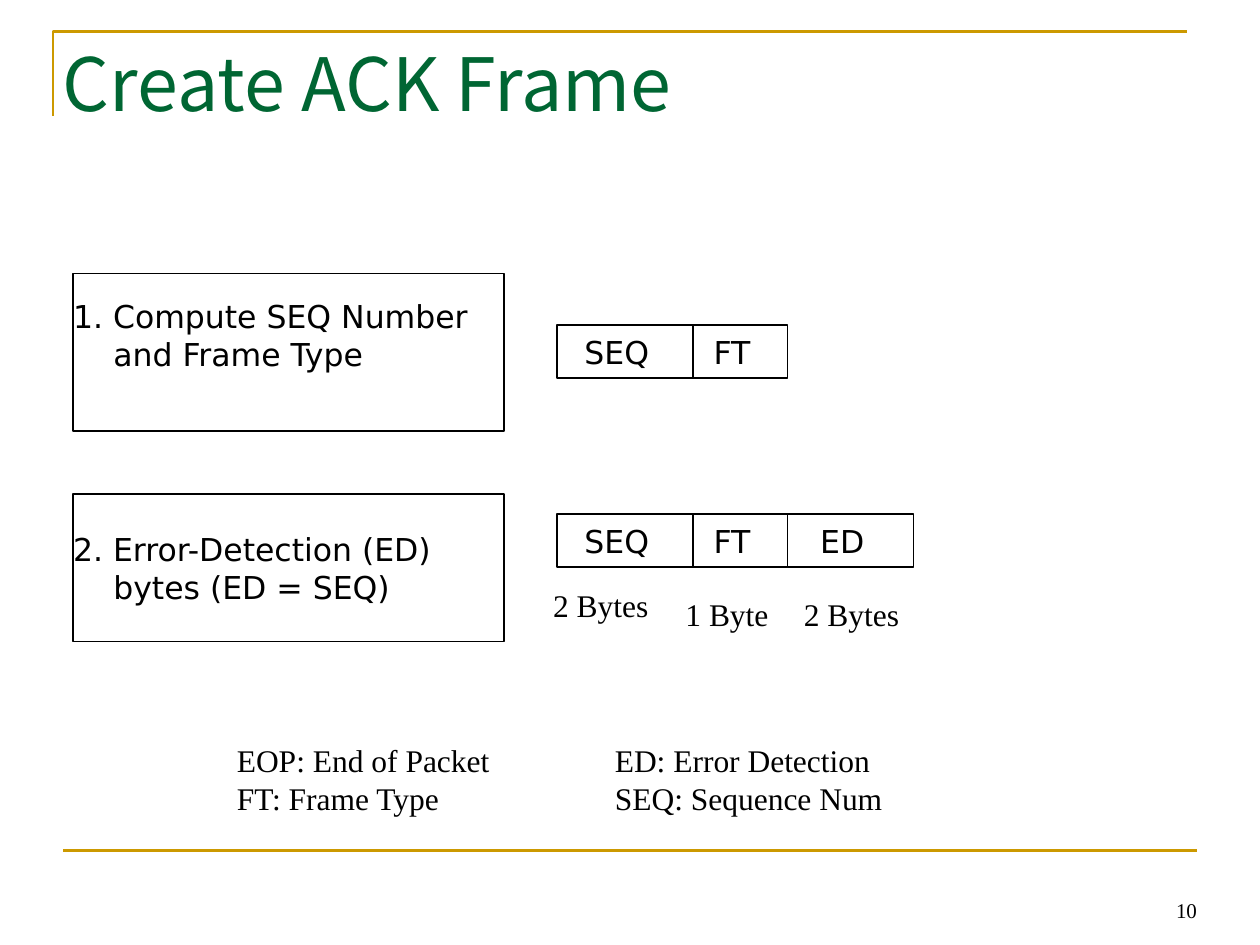
from dataclasses import dataclass

from lxml.etree import SubElement
from pptx import Presentation
from pptx.dml.color import RGBColor
from pptx.enum.shapes import MSO_CONNECTOR, MSO_SHAPE
from pptx.enum.text import MSO_ANCHOR, PP_ALIGN
from pptx.oxml.ns import qn
from pptx.util import Inches, Pt


@dataclass(frozen=True)
class Theme:
    ink: RGBColor = RGBColor(0x00, 0x00, 0x00)
    heading: RGBColor = RGBColor(0x00, 0x66, 0x33)
    rule: RGBColor = RGBColor(0xCC, 0x99, 0x00)
    heading_font: str = "Noto Sans CJK KR"
    box_font: str = "DejaVu Sans"
    note_font: str = "Times New Roman"
    heading_size: float = 42
    body_size: float = 18
    number_size: float = 12
    rule_width: float = 1.5
    box_width: float = 0.75


@dataclass(frozen=True)
class Step:
    text: str
    top: float
    height: float
    bottom_inset: float = 0


@dataclass(frozen=True)
class Field:
    name: str
    width: float


@dataclass(frozen=True)
class Note:
    text: str
    left: float
    top: float
    width: float


THEME = Theme()
STEPS = (
    Step("1. Compute SEQ Number and Frame Type", 2.17, 1.25, bottom_inset=0.28),
    Step("2. Error-Detection (ED) bytes (ED = SEQ)", 3.92, 1.17),
)
SEQ, FT, ED = Field("SEQ", 1.08), Field("FT", 0.75), Field("ED", 1)
FRAMES = ((2.58, (SEQ, FT)), (4.08, (SEQ, FT, ED)))
BYTE_COUNTS = (
    Note("2 Bytes", 4.34, 4.6, 0.87),
    Note("1 Byte", 5.39, 4.67, 0.77),
    Note("2 Bytes", 6.33, 4.67, 0.87),
)
LEGEND = "EOP: End of Packet\tED: Error Detection\nFT: Frame Type\tSEQ: Sequence Num"


def write(shape, text: str, *, font: str, size: float = THEME.body_size,
          color: RGBColor = THEME.ink, align=PP_ALIGN.LEFT, anchor=MSO_ANCHOR.TOP,
          insets=(0, 0, 0, 0), wrap: bool = True, hanging: float = 0,
          tab: float = 0) -> None:
    frame = shape.text_frame
    frame.text = text
    frame.word_wrap = wrap
    frame.vertical_anchor = anchor
    (frame.margin_left, frame.margin_top,
     frame.margin_right, frame.margin_bottom) = map(Inches, insets)
    for paragraph in frame.paragraphs:
        paragraph.alignment = align
        properties = paragraph._p.get_or_add_pPr()
        if hanging:
            properties.set("marL", str(Inches(hanging)))
            properties.set("indent", str(-Inches(hanging)))
        if tab:
            stops = SubElement(properties, qn("a:tabLst"))
            SubElement(stops, qn("a:tab"), pos=str(Inches(tab)), algn="l")
        for run in paragraph.runs:
            run.font.name = font
            run.font.size = Pt(size)
            run.font.color.rgb = color


def add_text(slide, text: str, left: float, top: float, width: float,
             height: float, **text_format) -> None:
    area = slide.shapes.add_textbox(*map(Inches, (left, top, width, height)))
    write(area, text, **text_format)


def add_box(slide, text: str, left: float, top: float, width: float,
            height: float, **text_format) -> None:
    box = slide.shapes.add_shape(
        MSO_SHAPE.RECTANGLE, *map(Inches, (left, top, width, height)))
    box.shadow.inherit = False
    box.fill.background()
    box.line.color.rgb = THEME.ink
    box.line.width = Pt(THEME.box_width)
    write(box, text, font=THEME.box_font, anchor=MSO_ANCHOR.MIDDLE, **text_format)


def add_frame(slide, top: float, fields: tuple[Field, ...]) -> None:
    left = 4.42
    for field in fields:
        add_box(slide, field.name, left, top, field.width, 0.42,
                align=PP_ALIGN.CENTER, insets=(0, 0, 0.13, 0), wrap=False)
        left += field.width


def add_rules(slide) -> None:
    builder = slide.shapes.build_freeform(Inches(0.42), Inches(0.92))
    builder.add_line_segments(
        [(Inches(0.42), Inches(0.25)), (Inches(9.42), Inches(0.25))], close=False)
    corner = builder.convert_to_shape()
    corner.shadow.inherit = False
    corner.fill.background()
    footer = slide.shapes.add_connector(
        MSO_CONNECTOR.STRAIGHT, *map(Inches, (0.5, 6.75, 9.5, 6.75)))
    SubElement(footer._element.spPr, qn("a:effectLst"))
    for rule in (corner, footer):
        rule.line.color.rgb = THEME.rule
        rule.line.width = Pt(THEME.rule_width)


def main() -> None:
    deck = Presentation()
    deck.slide_width, deck.slide_height = Inches(10), Inches(7.5)
    slide = deck.slides.add_slide(deck.slide_layouts[6])

    add_rules(slide)
    add_text(slide, "10", 7.17, 7.03, 2.33, 0.29, font=THEME.note_font,
             size=THEME.number_size, align=PP_ALIGN.RIGHT, anchor=MSO_ANCHOR.BOTTOM)
    add_text(slide, "Create ACK Frame", 0.5, 0.3, 9, 1.25, font=THEME.heading_font,
             size=THEME.heading_size, color=THEME.heading)
    for step in STEPS:
        add_box(slide, step.text, 0.58, step.top, 3.42, step.height,
                insets=(0, 0, 0, step.bottom_inset), hanging=0.32)
    for top, fields in FRAMES:
        add_frame(slide, top, fields)

    note_format = dict(font=THEME.note_font, insets=(0.05,) * 4, wrap=False)
    for note in BYTE_COUNTS:
        add_text(slide, note.text, note.left, note.top, note.width, 0.42, **note_format)
    add_text(slide, LEGEND, 1.83, 5.83, 5.24, 0.74, tab=3, **note_format)

    deck.save("out.pptx")


if __name__ == "__main__":
    main()
